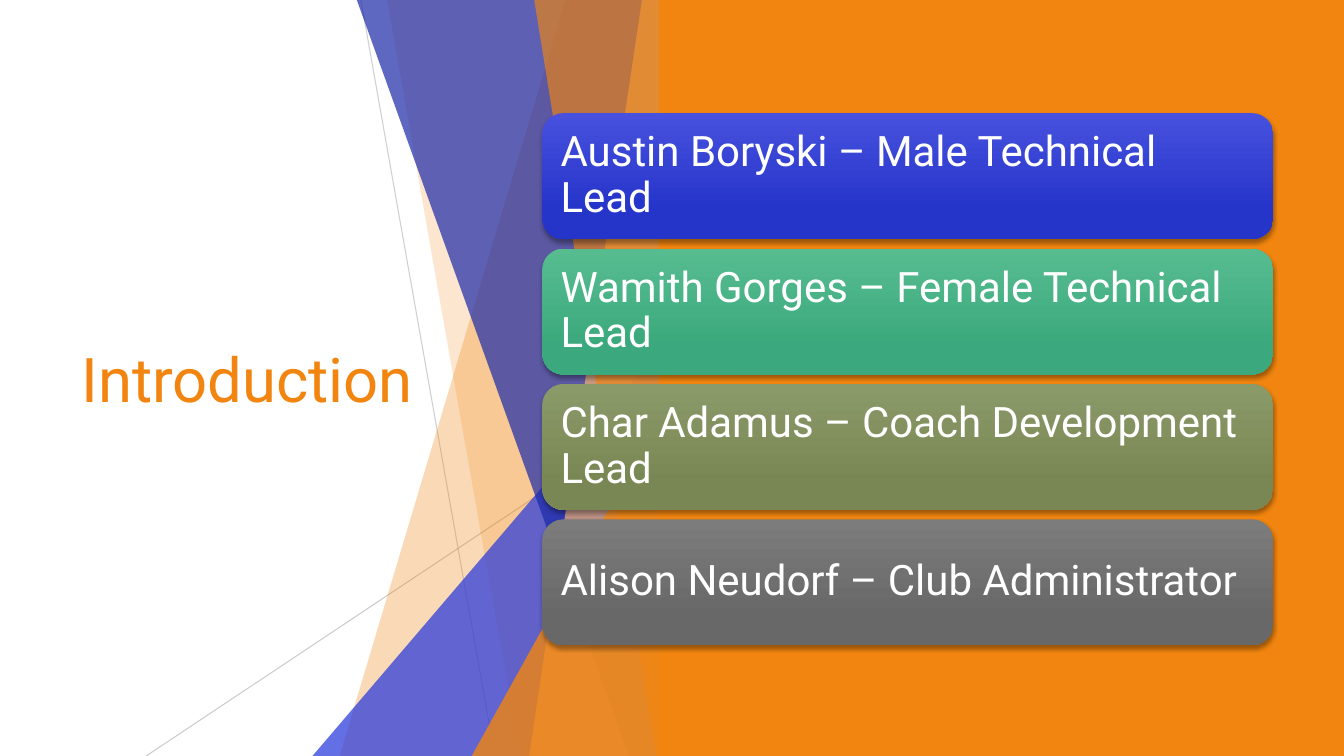
import pptx
import pptx.dml.color
import pptx.enum.shapes
import pptx.enum.text
import pptx.oxml
import pptx.oxml.ns
import pptx.util
from lxml import etree

Pt = pptx.util.Pt
SHAPES = pptx.enum.shapes.MSO_SHAPE
ORANGE, BLUE, NAVY, PEACH, GREY, WHITE = "F1850F", "2839DC", "1B29A8", "F7B66F", "BFBFBF", "FFFFFF"
WIDTH, HEIGHT = 960, 540
FACET_RIGHT = 479.7
CARD_LEFT, CARD_TOP, CARD_WIDTH, CARD_HEIGHT, CARD_PITCH = 387.4, 80.8, 522, 90, 96.7

CARDS = [
    ("Austin Boryski – Male Technical Lead", "4751DE", "2534C9"),
    ("Wamith Gorges – Female Technical Lead", "56BC90", "3BA97D"),
    ("Char Adamus – Coach Development Lead", "8B9A69", "788753"),
    ("Alison Neudorf – Club Administrator", "7C7C7C", "686868"),
]


def color(hex_string):
    return pptx.dml.color.RGBColor.from_string(hex_string)


def add_child(parent, tag, **attributes):
    child = etree.SubElement(parent, pptx.oxml.ns.qn(tag))
    for name, value in attributes.items():
        child.set(name, str(value))
    return child


def set_opacity(properties, percent):
    """Make the solid colour in a shape's or line's properties translucent."""
    solid = properties.find(".//" + pptx.oxml.ns.qn("a:srgbClr"))
    add_child(solid, "a:alpha", val=percent * 1000)


class SlideBuilder:
    font_name = "Roboto"

    def __init__(self, slide):
        self.slide = slide
        self.shapes = slide.shapes

    def paint(self, shape, hex_string, opacity=100):
        """Give a shape a flat fill without outline or shadow."""
        shape.shadow.inherit = False
        shape.line.fill.background()
        shape.fill.solid()
        shape.fill.fore_color.rgb = color(hex_string)
        if opacity < 100:
            set_opacity(shape.element.spPr, opacity)

    def line(self, x1, y1, x2, y2, opacity):
        connector = self.shapes.add_connector(
            pptx.enum.shapes.MSO_CONNECTOR.STRAIGHT, Pt(x1), Pt(y1), Pt(x2), Pt(y2))
        connector.line.color.rgb = color(GREY)
        connector.line.width = Pt(0.75)
        properties = connector.element.spPr
        set_opacity(properties, opacity)
        add_child(properties, "a:effectLst")

    def facet(self, top_x, bottom_x, hex_string, opacity):
        """Draw a full-height band from a slanted left edge to the facets' right edge."""
        builder = self.shapes.build_freeform(Pt(top_x), 0)
        builder.add_line_segments([
            (Pt(FACET_RIGHT), 0), (Pt(FACET_RIGHT), Pt(HEIGHT)), (Pt(bottom_x), Pt(HEIGHT))])
        self.paint(builder.convert_to_shape(), hex_string, opacity)

    def corner_triangle(self, left, top, hex_string, opacity):
        triangle = self.shapes.add_shape(
            SHAPES.ISOSCELES_TRIANGLE, Pt(left), Pt(top), Pt(FACET_RIGHT - left), Pt(HEIGHT - top))
        triangle.adjustments[0] = 1
        self.paint(triangle, hex_string, opacity)

    def panel(self, left, hex_string):
        panel = self.shapes.add_shape(
            SHAPES.RECTANGLE, Pt(left), 0, Pt(WIDTH - left), Pt(HEIGHT))
        self.paint(panel, hex_string)

    def set_text(self, shape, text, size, hex_string):
        frame = shape.text_frame
        frame.word_wrap = True
        frame.vertical_anchor = pptx.enum.text.MSO_ANCHOR.MIDDLE
        paragraph = frame.paragraphs[0]
        paragraph.text = text
        paragraph.alignment = pptx.enum.text.PP_ALIGN.LEFT
        paragraph.font.name = self.font_name
        paragraph.font.size = Pt(size)
        paragraph.font.color.rgb = color(hex_string)
        return frame

    def title(self, text, left, top, width, height):
        box = self.shapes.add_textbox(Pt(left), Pt(top), Pt(width), Pt(height))
        self.set_text(box, text, 44, ORANGE)

    def card(self, top, text, top_color, bottom_color):
        card = self.shapes.add_shape(
            SHAPES.ROUNDED_RECTANGLE, Pt(CARD_LEFT), Pt(top), Pt(CARD_WIDTH), Pt(CARD_HEIGHT))
        card.line.fill.background()
        card.fill.gradient()
        card.fill.gradient_angle = 270
        stops = zip(card.fill.gradient_stops, (0, 0.78), (top_color, bottom_color))
        for stop, position, hex_string in stops:
            stop.position = position
            stop.color.rgb = color(hex_string)
        card.shadow.inherit = False
        effects = card.element.spPr.find(pptx.oxml.ns.qn("a:effectLst"))
        shadow = add_child(effects, "a:outerShdw", blurRad=Pt(3), dist=Pt(2),
                           dir=90 * 60000, rotWithShape=0)
        shadow_color = add_child(shadow, "a:srgbClr", val="000000")
        add_child(shadow_color, "a:alpha", val=35000)
        frame = self.set_text(card, text, 30, WHITE)
        frame.margin_left = frame.margin_right = Pt(8.64)
        frame.margin_top = frame.margin_bottom = Pt(8.64)
        frame.paragraphs[0].line_spacing = 0.9


def main():
    presentation = pptx.Presentation()
    presentation.slide_width = Pt(WIDTH)
    presentation.slide_height = Pt(HEIGHT)
    builder = SlideBuilder(presentation.slides.add_slide(presentation.slide_layouts[6]))

    builder.title("Introduction", 51, 108.7, 279.4, 322.6)
    builder.line(257.8, 0, 353.5, HEIGHT, 75)
    builder.line(FACET_RIGHT, 290.2, 104.4, HEIGHT, 80)
    builder.facet(404, 242.6, ORANGE, 30)
    builder.facet(276.5, 371.5, ORANGE, 20)
    builder.corner_triangle(223.2, 239.8, BLUE, 72)
    builder.facet(254.9, 449.3, NAVY, 70)
    builder.facet(458.6, 378, PEACH, 70)
    builder.facet(381.6, 468.7, ORANGE, 65)
    builder.corner_triangle(337, 283, ORANGE, 80)
    builder.panel(470.9, ORANGE)
    for index, card in enumerate(CARDS):
        builder.card(CARD_TOP + index * CARD_PITCH, *card)

    presentation.save("out.pptx")


if __name__ == "__main__":
    main()
